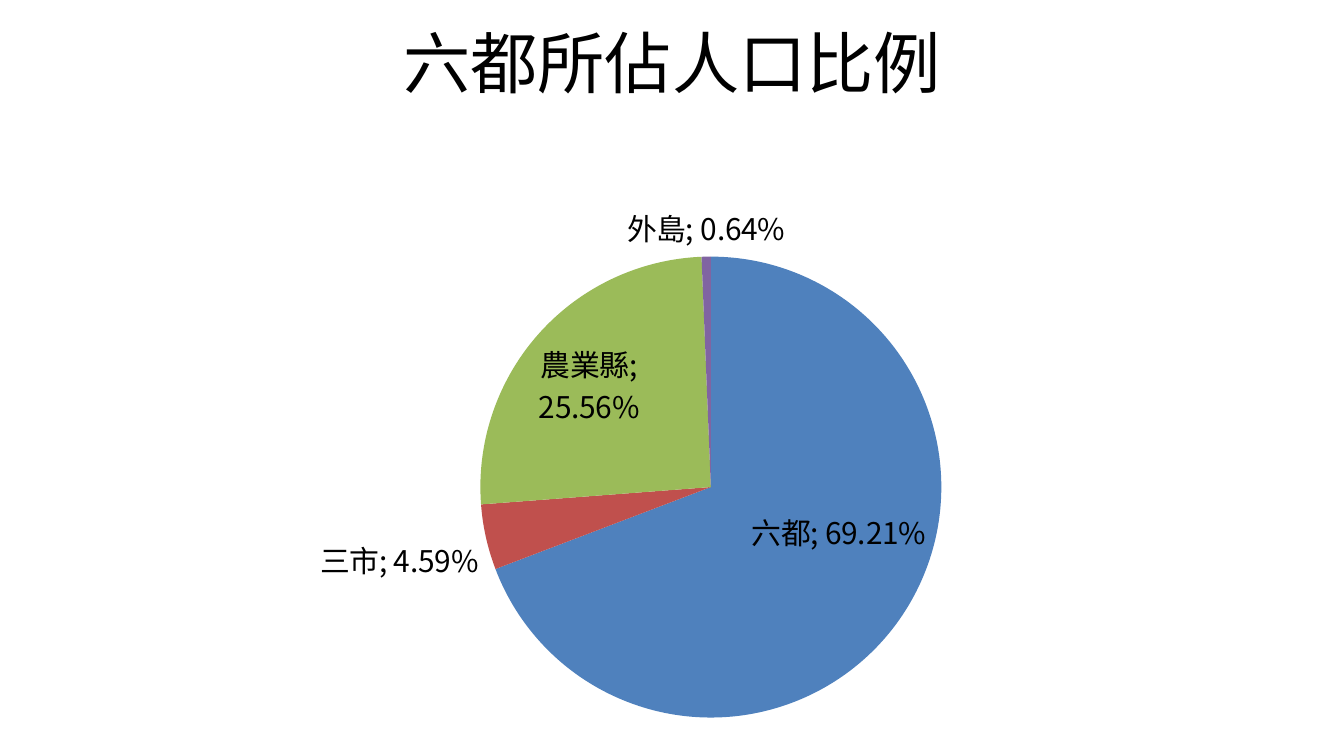
from dataclasses import dataclass

from lxml import etree
from pptx import Presentation
from pptx.chart.data import CategoryChartData
from pptx.dml.color import RGBColor
from pptx.enum.chart import XL_CHART_TYPE, XL_LABEL_POSITION
from pptx.enum.text import MSO_ANCHOR, PP_ALIGN
from pptx.oxml.ns import qn
from pptx.util import Inches, Pt

PIE = XL_CHART_TYPE.PIE
BEST = XL_LABEL_POSITION.BEST_FIT
MIDDLE = MSO_ANCHOR.MIDDLE
CENTER = PP_ALIGN.CENTER


@dataclass(frozen=True)
class Theme:
    ink: str = "000000"
    paper: str = "FFFFFF"
    slices: tuple = ("4F81BD", "C0504D", "9BBB59", "8064A2")
    face: str = "Noto Sans CJK SC"
    base: str = "Calibri"
    head: int = 36
    label: int = 16
    body: int = 18


def style(font, size, color, face):
    font.size = Pt(size)
    font.name = face
    font.bold = False
    font.color.rgb = RGBColor.from_string(color)


def set_asian(props, face):
    latin = props.find(qn("a:latin"))
    asian = etree.Element(qn("a:ea"), typeface=face)
    latin.addnext(asian)


def write(frame, text, size, color, face, align=CENTER):
    para = frame.paragraphs[0]
    para.alignment = align
    run = para.add_run()
    run.text = text
    style(run.font, size, color, face)
    set_asian(run._r.get_or_add_rPr(), face)


class Page:
    def __init__(self, deck, theme):
        self.theme = theme
        self.slide = deck.slides.add_slide(deck.slide_layouts[5])
        fill = self.slide.background.fill
        fill.solid()
        fill.fore_color.rgb = RGBColor.from_string(theme.paper)

    def title(self, text, left, top, width, height):
        box = self.slide.shapes.title
        box.left, box.top = Inches(left), Inches(top)
        box.width, box.height = Inches(width), Inches(height)
        box.text_frame.vertical_anchor = MIDDLE
        look = self.theme
        write(box.text_frame, text, look.head, look.ink, look.face)

    def pie(self, shares, left, top, width, height, plot):
        look = self.theme
        data = CategoryChartData(number_format="0.00%")
        data.categories = list(shares)
        data.add_series("Series 1", list(shares.values()))
        frame = self.slide.shapes.add_chart(
            PIE, Inches(left), Inches(top), Inches(width), Inches(height), data
        )
        chart = frame.chart
        chart.has_title = False
        chart.has_legend = False
        style(chart.font, look.body, look.ink, look.base)
        chart.plots[0].vary_by_categories = True
        series = chart.plots[0].series[0]
        for index, color in enumerate(look.slices):
            fill = series.points[index].format.fill
            fill.solid()
            fill.fore_color.rgb = RGBColor.from_string(color)
        self.labels(series.data_labels)
        self.layout(chart, plot)

    def labels(self, labels):
        look = self.theme
        labels.show_value = True
        labels.show_category_name = True
        labels.show_percentage = False
        labels.number_format = "0.00%"
        labels.number_format_is_linked = False
        labels.position = BEST
        style(labels.font, look.label, look.ink, look.face)
        root = labels._element
        set_asian(root.find(".//" + qn("a:defRPr")), look.face)
        mark = etree.Element(qn("c:separator"))
        mark.text = "; "
        last = root.find(qn("c:showBubbleSize"))
        if last is None:
            last = root.find(qn("c:showPercent"))
        last.addnext(mark)

    def layout(self, chart, plot):
        area = chart._chartSpace.find(".//" + qn("c:plotArea"))
        for old in area.findall(qn("c:layout")):
            area.remove(old)
        layout = etree.Element(qn("c:layout"))
        area.insert(0, layout)
        manual = etree.SubElement(layout, qn("c:manualLayout"))
        rules = [("layoutTarget", "inner"), ("xMode", "edge"), ("yMode", "edge")]
        rules += zip("xywh", plot)
        for name, value in rules:
            etree.SubElement(manual, qn("c:" + name), val=str(value))


def main():
    deck = Presentation()
    deck.slide_width = Inches(10)
    deck.slide_height = deck.slide_width * 9 // 16
    page = Page(deck, Theme())
    page.title("六都所佔人口比例", 0.5, 0.07, 9, 0.78)
    shares = {"六都": 0.6921, "三市": 0.0459, "農業縣": 0.2556, "外島": 0.0064}
    inset, drop = 0.71, 0.59
    wide, high = 9, 4.02
    plot = (inset / wide, drop / high, 8.14 / wide, 1 - drop / high)
    page.pie(shares, 0.51, 1.32, wide, high, plot)
    deck.save("out.pptx")


if __name__ == "__main__":
    main()
